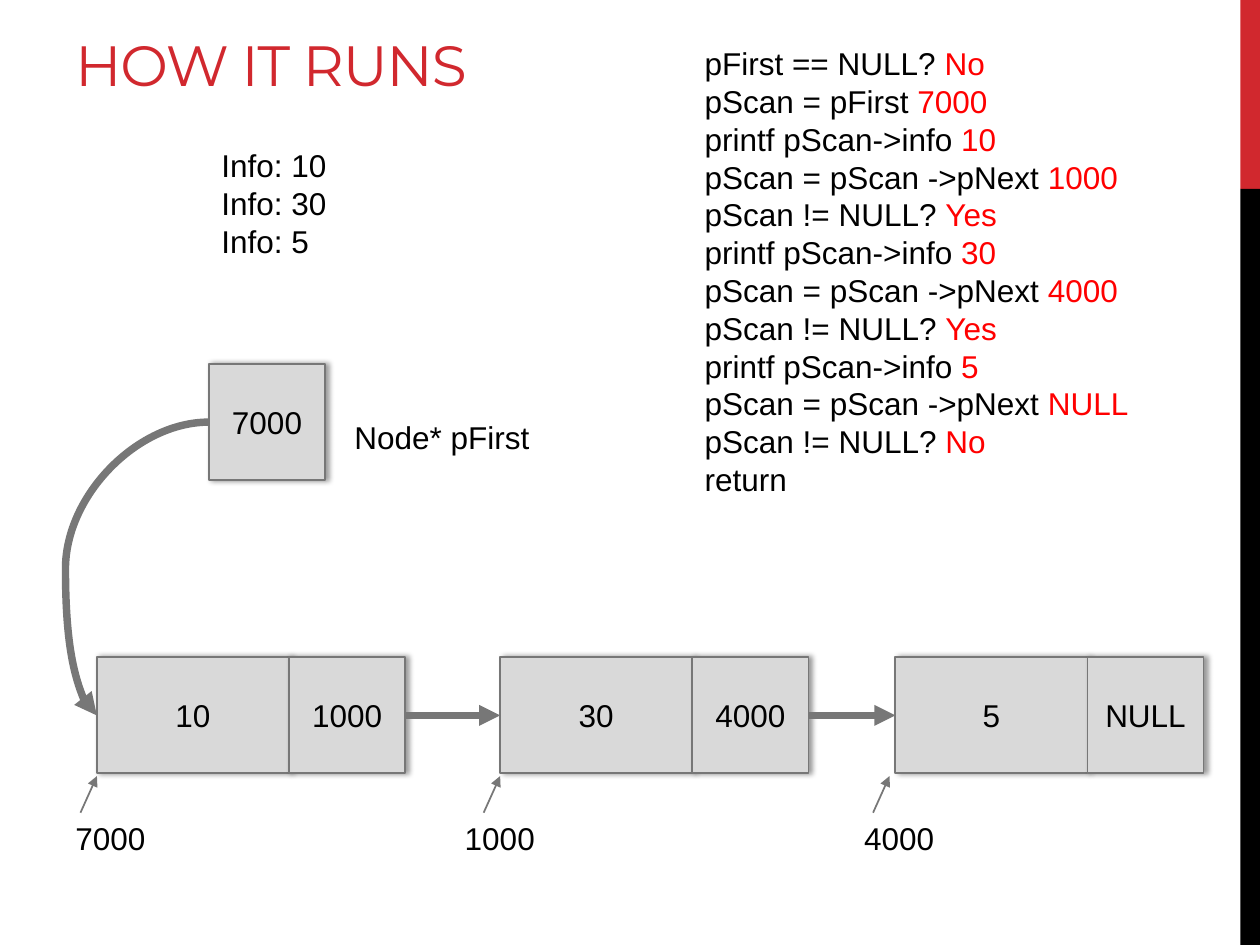
import pptx
import pptx.util
import pptx.dml.color
import pptx.enum.shapes
import pptx.enum.text
import pptx.oxml
import pptx.oxml.ns

Pt = pptx.util.Pt
SHAPE = pptx.enum.shapes.MSO_SHAPE
CONNECTOR = pptx.enum.shapes.MSO_CONNECTOR
ANCHOR = pptx.enum.text.MSO_ANCHOR
ALIGN = pptx.enum.text.PP_ALIGN

THEME = {
    "accent": "D1282E", "black": "000000", "answer": "FF0000",
    "cell": "D9D9D9", "line": "777777",
    "title_font": "Montserrat", "body_font": "Arial",
    "title_size": 32.4, "body_size": 18,
}

TITLE = "HOW IT RUNS"
OUTPUT = ["Info: 10", "Info: 30", "Info: 5"]
STEPS = [
    ("pFirst == NULL? ", "No"),
    ("pScan = pFirst ", "7000"),
    ("printf pScan->info ", "10"),
    ("pScan = pScan ->pNext ", "1000"),
    ("pScan != NULL? ", "Yes"),
    ("printf pScan->info ", "30"),
    ("pScan = pScan ->pNext ", "4000"),
    ("pScan != NULL? ", "Yes"),
    ("printf pScan->info ", "5"),
    ("pScan = pScan ->pNext ", "NULL"),
    ("pScan != NULL? ", "No"),
    ("return",),
]
# info, next pointer, address, node left, address left, address arrow tip
NODES = [
    ("10", "1000", "7000", 55.4, 36, 55.4),
    ("30", "4000", "1000", 285.8, 258.5, 285.8),
    ("5", "NULL", "4000", 511.6, 486.7, 508.3),
]
INFO_WIDTH, CELL = 109.8, 66.4
NODE_TOP = 375.6
NODE_MIDDLE = NODE_TOP + CELL / 2
FIRST_LEFT, FIRST_TOP = 119.4, 208
ADDRESS_TOP = 464.4


def color(name):
    return pptx.dml.color.RGBColor.from_string(THEME[name])


def add_effects(shape, content=""):
    """Give a shape its own effect list; an empty one removes the theme shadow."""
    namespace = pptx.oxml.ns.nsdecls("a")
    shape._element.spPr.append(
        pptx.oxml.parse_xml(f"<a:effectLst {namespace}>{content}</a:effectLst>"))


def write(shape, lines, font="body_font", size="body_size", colors=("black", "answer"),
          align=ALIGN.LEFT, anchor=ANCHOR.TOP, wrap=True, spacing=None):
    """Fill a shape with lines; each is a string or a tuple of runs coloured in turn."""
    frame = shape.text_frame
    frame.word_wrap = wrap
    frame.vertical_anchor = anchor
    for index, line in enumerate(lines):
        para = frame.paragraphs[0] if index == 0 else frame.add_paragraph()
        para.alignment = align
        runs = (line,) if isinstance(line, str) else line
        for text, name in zip(runs, colors):
            span = para.add_run()
            span.text = text
            span.font.name = THEME[font]
            span.font.size = Pt(THEME[size])
            span.font.color.rgb = color(name)
            if spacing is not None:
                span.font._element.set("spc", str(spacing))


def add_text(page, lines, left, top, width, height, **style):
    box = page.shapes.add_textbox(Pt(left), Pt(top), Pt(width), Pt(height))
    write(box, lines, **style)


def add_bar(page, top, height, fill):
    bar = page.shapes.add_shape(SHAPE.RECTANGLE, Pt(708.8), Pt(top), Pt(11.2), Pt(height))
    bar.shadow.inherit = False
    bar.fill.solid()
    bar.fill.fore_color.rgb = color(fill)
    bar.line.fill.background()


def add_cell(page, text, left, top, width):
    cell = page.shapes.add_shape(SHAPE.RECTANGLE, Pt(left), Pt(top), Pt(width), Pt(CELL))
    cell.fill.solid()
    cell.fill.fore_color.rgb = color("cell")
    cell.line.color.rgb = color("line")
    cell.line.width = Pt(1)
    add_effects(cell, f'<a:outerShdw blurRad="{Pt(3.1)}" dist="{Pt(1.8)}" dir="0" '
                      'rotWithShape="0"><a:srgbClr val="000000">'
                      '<a:alpha val="40000"/></a:srgbClr></a:outerShdw>')
    write(cell, [text], align=ALIGN.CENTER, anchor=ANCHOR.MIDDLE)


def add_arrow(page, start, end, width, kind=CONNECTOR.STRAIGHT, bend=None):
    """Draw an arrow; bend places a curve's middle, in 1/100000 of its width."""
    arrow = page.shapes.add_connector(kind, *(Pt(value) for value in (*start, *end)))
    arrow.line.color.rgb = color("line")
    arrow.line.width = Pt(width)
    namespace = pptx.oxml.ns.nsdecls("a")
    arrow.line._get_or_add_ln().append(
        pptx.oxml.parse_xml(f'<a:tailEnd {namespace} type="triangle"/>'))
    add_effects(arrow)
    if bend is not None:
        geometry = arrow._element.spPr.find(pptx.oxml.ns.qn("a:prstGeom"))
        guides = geometry.find(pptx.oxml.ns.qn("a:avLst"))
        guides.append(pptx.oxml.parse_xml(
            f'<a:gd {namespace} name="adj1" fmla="val {bend}"/>'))


def main():
    deck = pptx.Presentation()
    deck.slide_width, deck.slide_height = Pt(720), Pt(540)
    page = deck.slides.add_slide(deck.slide_layouts[6])

    add_bar(page, 0, 108, "accent")
    add_bar(page, 108, 432, "black")
    add_text(page, [TITLE], 36, 12.2, 649.4, 47.5, font="title_font", size="title_size",
             colors=("accent",), anchor=ANCHOR.BOTTOM, spacing=-60)

    for info, pointer, address, left, address_left, tip in NODES:
        add_cell(page, info, left, NODE_TOP, INFO_WIDTH)
        add_cell(page, pointer, left + INFO_WIDTH, NODE_TOP, CELL)
        add_text(page, [address], address_left, ADDRESS_TOP, 54.7, 29, wrap=False)
        add_arrow(page, (tip - 9.4, ADDRESS_TOP), (tip, 443.5), 1)
    lefts = [node[3] for node in NODES]
    for left, following in zip(lefts, lefts[1:]):
        add_arrow(page, (left + INFO_WIDTH + CELL, NODE_MIDDLE), (following, NODE_MIDDLE), 4)

    add_cell(page, "7000", FIRST_LEFT, FIRST_TOP, CELL)
    add_arrow(page, (FIRST_LEFT, FIRST_TOP + CELL / 2), (lefts[0], NODE_MIDDLE), 4.25,
              kind=CONNECTOR.CURVE, bend=128000)
    add_text(page, ["Node* pFirst"], 195.5, 235.6, 115.2, 29, wrap=False)
    add_text(page, STEPS, 395.6, 21.8, 279.4, 269.3)
    add_text(page, OUTPUT, 119.4, 80, 74.9, 72.7, wrap=False)

    deck.save("out.pptx")


if __name__ == "__main__":
    main()
